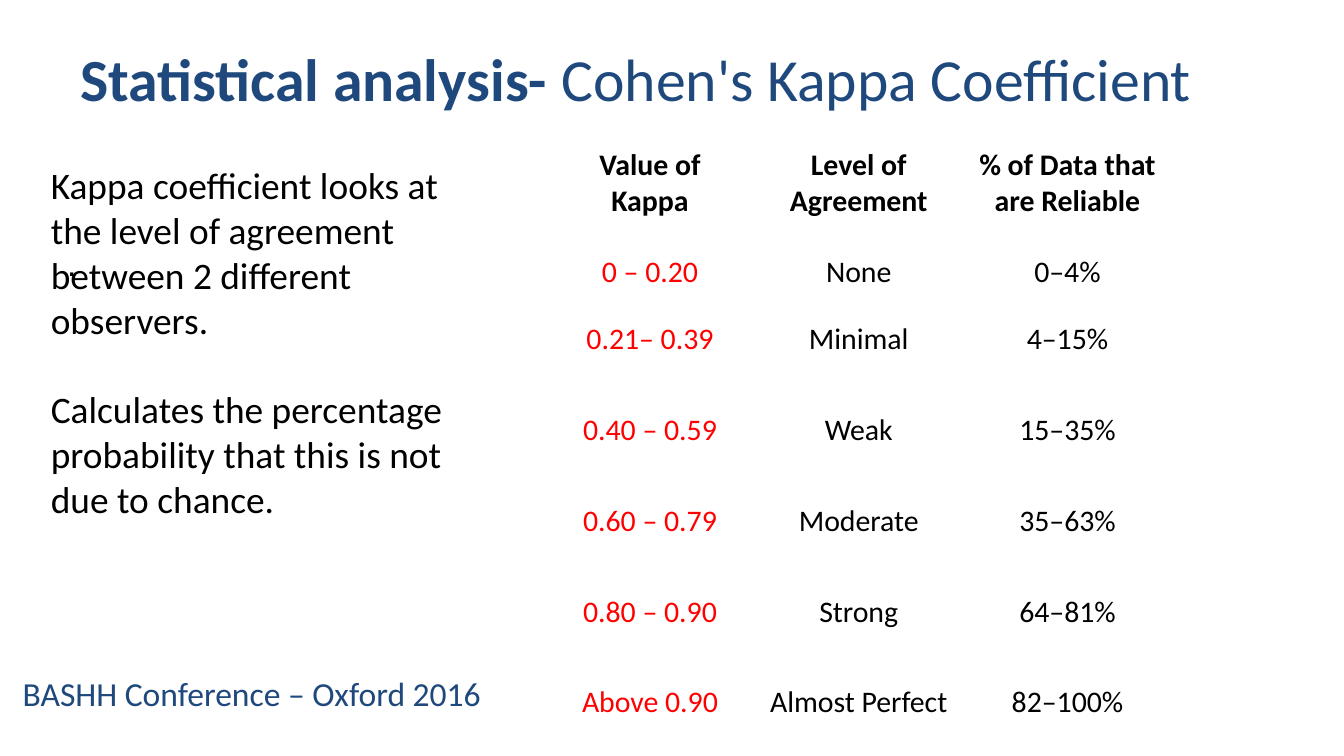
from dataclasses import dataclass

from pptx import Presentation
from pptx.dml.color import RGBColor
from pptx.enum.shapes import MSO_SHAPE
from pptx.enum.text import MSO_ANCHOR, PP_ALIGN
from pptx.util import Inches, Pt

RECT = MSO_SHAPE.RECTANGLE
TOP, MIDDLE = MSO_ANCHOR.TOP, MSO_ANCHOR.MIDDLE
LEFT, CENTER = PP_ALIGN.LEFT, PP_ALIGN.CENTER


@dataclass(frozen=True)
class Theme:
    """Colours, fonts and type sizes of the slide."""
    navy: RGBColor = RGBColor(0x1F, 0x49, 0x7D)
    black: RGBColor = RGBColor(0, 0, 0)
    red: RGBColor = RGBColor(0xFF, 0, 0)
    white: RGBColor = RGBColor(0xFF, 0xFF, 0xFF)
    font: str = "Calibri"
    plain: str = "Arial"
    title: int = 32
    body: int = 20
    note: int = 18
    cell: int = 16


THEME = Theme()
HEADS = ["Value of Kappa", "Level of Agreement", "% of Data that are Reliable"]
LEVELS = [
    ["0 – 0.20", "None", "0–4%"],
    ["0.21– 0.39", "Minimal", "4–15%"],
    ["0.40 – 0.59", "Weak", "15–35%"],
    ["0.60 – 0.79", "Moderate", "35–63%"],
    ["0.80 – 0.90", "Strong", "64–81%"],
    ["Above 0.90", "Almost Perfect", "82–100%"],
]
TALL, SHORT = 0.97, 0.5
POINTS = [
    "Kappa coefficient looks at the level of agreement between 2 different observers.",
    "Calculates the percentage probability that this is not due to chance.",
]


def style(para, size, color, bold=False, font=THEME.font, align=LEFT):
    """Set the font and alignment of a paragraph."""
    para.alignment = align
    para.font.name = font
    para.font.size = Pt(size)
    para.font.bold = bold
    para.font.color.rgb = color


def add_frame(slide, box, anchor=TOP):
    """Add a wrapping text box and return its frame."""
    frame = slide.shapes.add_textbox(*map(Inches, box)).text_frame
    frame.word_wrap = True
    frame.vertical_anchor = anchor
    return frame


def add_title(slide, box):
    """Add the title with its bold lead."""
    para = add_frame(slide, box, MIDDLE).paragraphs[0]
    lead, rest = para.add_run(), para.add_run()
    lead.text = "Statistical analysis- "
    rest.text = "Cohen's Kappa Coefficient"
    style(para, THEME.title, THEME.navy)
    lead.font.bold = True


def add_points(slide, box):
    """Add the explanation, one paragraph per point."""
    frame = add_frame(slide, box)
    for index, text in enumerate(POINTS):
        para = frame.add_paragraph() if index else frame.paragraphs[0]
        para.text = text
        para.space_before = Pt(24 if index else 0)
        style(para, THEME.body, THEME.black)


def add_dot(slide, box):
    """Add the small white block that holds a full stop."""
    block = slide.shapes.add_shape(RECT, *map(Inches, box))
    block.shadow.inherit = False
    block.fill.solid()
    block.fill.fore_color.rgb = THEME.white
    block.line.fill.background()
    frame = block.text_frame
    frame.word_wrap = False
    frame.vertical_anchor = TOP
    frame.margin_left = frame.margin_right = 0
    frame.margin_top = frame.margin_bottom = Inches(0.24)
    frame.text = "."
    style(frame.paragraphs[0], THEME.note, THEME.black, font=THEME.plain)


def add_levels(slide, box):
    """Add the table of kappa values and agreement."""
    rows = [HEADS] + LEVELS
    rest = len(rows) - 2
    heights = [TALL, SHORT] + [(box[3] - TALL - SHORT) / rest] * rest
    table = slide.shapes.add_table(len(rows), len(HEADS), *map(Inches, box)).table
    table.first_row = table.horz_banding = False
    for col in table.columns:
        col.width = Inches(box[2] / len(HEADS))
    for r, texts in enumerate(rows):
        table.rows[r].height = Inches(heights[r])
        for c, text in enumerate(texts):
            cell = table.cell(r, c)
            cell.fill.background()
            cell.margin_top = cell.margin_bottom = Inches(0.04)
            cell.vertical_anchor = TOP if r else MIDDLE
            cell.text = text
            color = THEME.red if r and c == 0 else THEME.black
            style(cell.text_frame.paragraphs[0], THEME.cell, color,
                  bold=r == 0, align=CENTER)


def add_footer(slide, box):
    """Add the conference line."""
    para = add_frame(slide, box).paragraphs[0]
    para.text = "BASHH Conference – Oxford 2016"
    style(para, THEME.note, THEME.navy)


def main():
    """Build and save the slide."""
    deck = Presentation()
    deck.slide_width = Inches(10)
    deck.slide_height = deck.slide_width * 9 // 16
    slide = deck.slides.add_slide(deck.slide_layouts[6])
    add_footer(slide, (0.07, 4.96, 4.78, 0.69))
    add_title(slide, (0.5, 0.23, 9, 0.7))
    add_levels(slide, (4.06, 0.88, 4.66, 4.85))
    add_dot(slide, (0.5, 1.57, 0.07, 1.09))
    add_points(slide, (0.28, 1.16, 3.46, 2.83))
    deck.save("out.pptx")


if __name__ == "__main__":
    main()
